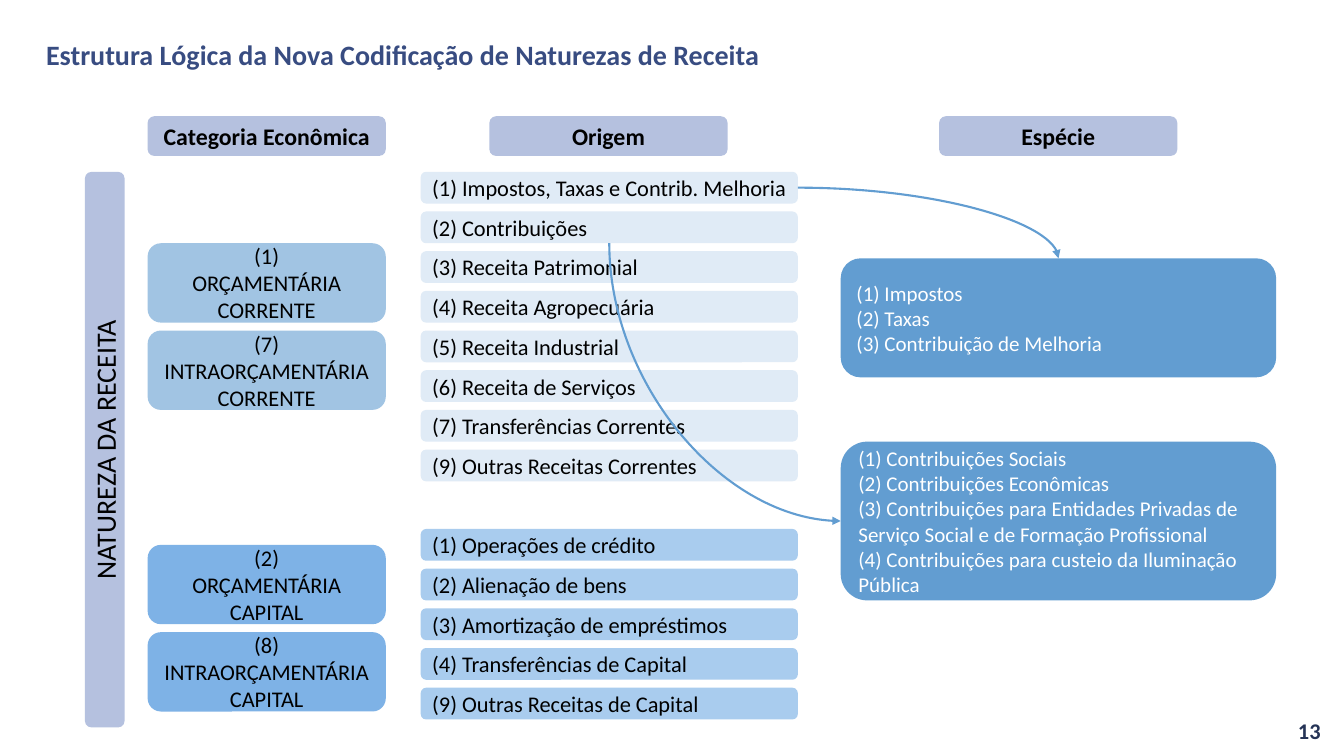
"""Builds the slide on the logical structure of revenue coding, on a one-centimetre grid."""
from dataclasses import dataclass

from lxml.etree import SubElement
from pptx import Presentation
from pptx.dml.color import RGBColor
from pptx.enum.shapes import MSO_CONNECTOR, MSO_SHAPE
from pptx.enum.text import MSO_ANCHOR, PP_ALIGN
from pptx.oxml.ns import qn
from pptx.util import Cm, Inches, Pt

FONT = "Calibri"
BLACK, WHITE, NAVY, DARK_NAVY = "000000", "FFFFFF", "384C81", "253356"
LAVENDER, BLUE = "B5C1DF", "629DD1"
TOP, RIGHT, BOTTOM, LEFT = 0, 3, 2, 1
CATEGORY_LEFT, ORIGIN_LEFT, SPECIES_LEFT = 3.72, 10.6, 21.18
HEADER_TOP, GRID_TOP = 2.93, 4.33
HEADER_WIDTH, ORIGIN_WIDTH, SPECIES_WIDTH = 6, 9.5, 10.97


@dataclass
class Label:
    """Text with its place in grid units and its look."""

    text: str
    left: float
    top: float
    width: float
    height: float
    fill: str = ""
    size: int = 16
    color: str = BLACK
    bold: bool = False
    align: PP_ALIGN = PP_ALIGN.LEFT
    rotation: int = 0


@dataclass
class Group:
    """Categories and origins of one kind of revenue."""

    row: int
    category_top: float
    category_fill: str
    origin_fill: str
    categories: list[str]
    origins: list[str]


GROUPS = [
    Group(0, 6.13, "A1C4E3", "E0EBF6",
          ["(1)\nORÇAMENTÁRIA\nCORRENTE", "(7)\nINTRAORÇAMENTÁRIA\nCORRENTE"],
          ["(1) Impostos, Taxas e Contrib. Melhoria", "(2) Contribuições",
           "(3) Receita Patrimonial", "(4) Receita Agropecuária",
           "(5) Receita Industrial", "(6) Receita de Serviços",
           "(7) Transferências Correntes", "(9) Outras Receitas Correntes"]),
    Group(9, 13.73, "7EB2E6", "A9CCEE",
          ["(2)\nORÇAMENTÁRIA\nCAPITAL", "(8)\nINTRAORÇAMENTÁRIA\nCAPITAL"],
          ["(1) Operações de crédito", "(2) Alienação de bens",
           "(3) Amortização de empréstimos", "(4) Transferências de Capital",
           "(9) Outras Receitas de Capital"]),
]
HEADERS = [("Categoria Econômica", CATEGORY_LEFT), ("Origem", 12.33), ("Espécie", 23.66)]
TAXES = "(1) Impostos\n(2) Taxas\n(3) Contribuição de Melhoria"
CONTRIBUTIONS = (
    "(1) Contribuições Sociais\n(2) Contribuições Econômicas\n"
    "(3) Contribuições para Entidades Privadas de Serviço Social e de Formação Profissional\n"
    "(4) Contribuições para custeio da Iluminação Pública"
)


def rgb(value: str) -> RGBColor:
    """Turn a hex string into a colour."""
    return RGBColor.from_string(value)


def draw_label(page, label: Label):
    """Draw a rounded box, or a plain text box when there is no fill."""
    place = [Cm(length) for length in (label.left, label.top, label.width, label.height)]
    if label.fill:
        box = page.shapes.add_shape(MSO_SHAPE.ROUNDED_RECTANGLE, *place)
        box.shadow.inherit = False
        box.fill.solid()
        box.fill.fore_color.rgb = rgb(label.fill)
        box.line.fill.background()
    else:
        box = page.shapes.add_textbox(*place)
    box.rotation = label.rotation
    frame = box.text_frame
    frame.text = label.text
    frame.word_wrap = True
    frame.vertical_anchor = MSO_ANCHOR.MIDDLE
    for para in frame.paragraphs:
        para.alignment = label.align
        for span in para.runs:
            span.font.name = FONT
            span.font.size = Pt(label.size)
            span.font.bold = label.bold
            span.font.color.rgb = rgb(label.color)
    return box


def draw_curve(page, source, source_site: int, target, target_site: int) -> None:
    """Join two boxes with a quarter-curve arrow that leaves rightwards or downwards."""
    curve = page.shapes.add_connector(MSO_CONNECTOR.CURVE, 0, 0, 0, 0)
    curve.begin_connect(source, source_site)
    curve.end_connect(target, target_site)
    properties = curve._element.spPr
    properties.find(qn("a:prstGeom")).set("prst", "curvedConnector2")
    if source_site == BOTTOM:
        shift = (curve.width - curve.height) // 2
        curve.left, curve.top = curve.left + shift, curve.top - shift
        curve.width, curve.height = curve.height, curve.width
        frame = properties.find(qn("a:xfrm"))
        frame.set("rot", "16200000")
        frame.set("flipH", "1")
    curve.line.color.rgb = rgb(BLUE)
    curve.line.width = Pt(1.5)
    SubElement(properties.find(qn("a:ln")), qn("a:tailEnd"), type="triangle")
    SubElement(properties, qn("a:effectLst"))


def draw_group(page, group: Group) -> list:
    """Draw the categories and origins of a group and return the origin boxes."""
    for index, text in enumerate(group.categories):
        draw_label(page, Label(text, CATEGORY_LEFT, group.category_top + 2.2 * index,
                               HEADER_WIDTH, 2, group.category_fill, align=PP_ALIGN.CENTER))
    return [
        draw_label(page, Label(text, ORIGIN_LEFT, GRID_TOP + group.row + index,
                               ORIGIN_WIDTH, 0.8, group.origin_fill))
        for index, text in enumerate(group.origins)
    ]


def main() -> None:
    """Build and save the deck."""
    deck = Presentation()
    deck.slide_width, deck.slide_height = Inches(13.33), Inches(7.5)
    page = deck.slides.add_slide(deck.slide_layouts[6])
    draw_label(page, Label("Estrutura Lógica da Nova Codificação de Naturezas de Receita",
                           0.91, 0.36, 29.21, 2, size=20, color=NAVY, bold=True))
    draw_label(page, Label("13", 25.9, 17.91, 7.62, 1.02, color=DARK_NAVY,
                           bold=True, align=PP_ALIGN.RIGHT))
    draw_label(page, Label("NATUREZA DA RECEITA", -4.36, 10.83, 14, 1, LAVENDER, 20,
                           align=PP_ALIGN.CENTER, rotation=270))
    for text, left in HEADERS:
        draw_label(page, Label(text, left, HEADER_TOP, HEADER_WIDTH, 1, LAVENDER, 17,
                               bold=True, align=PP_ALIGN.CENTER))
    current_origins, _ = [draw_group(page, group) for group in GROUPS]
    taxes, contributions = [
        draw_label(page, Label(text, SPECIES_LEFT, top, SPECIES_WIDTH, height, BLUE, 15, WHITE))
        for text, top, height in ((TAXES, 6.51, 3), (CONTRIBUTIONS, 11.13, 4))
    ]
    draw_curve(page, current_origins[0], RIGHT, taxes, TOP)
    draw_curve(page, current_origins[1], BOTTOM, contributions, LEFT)
    deck.save("out.pptx")


if __name__ == "__main__":
    main()
